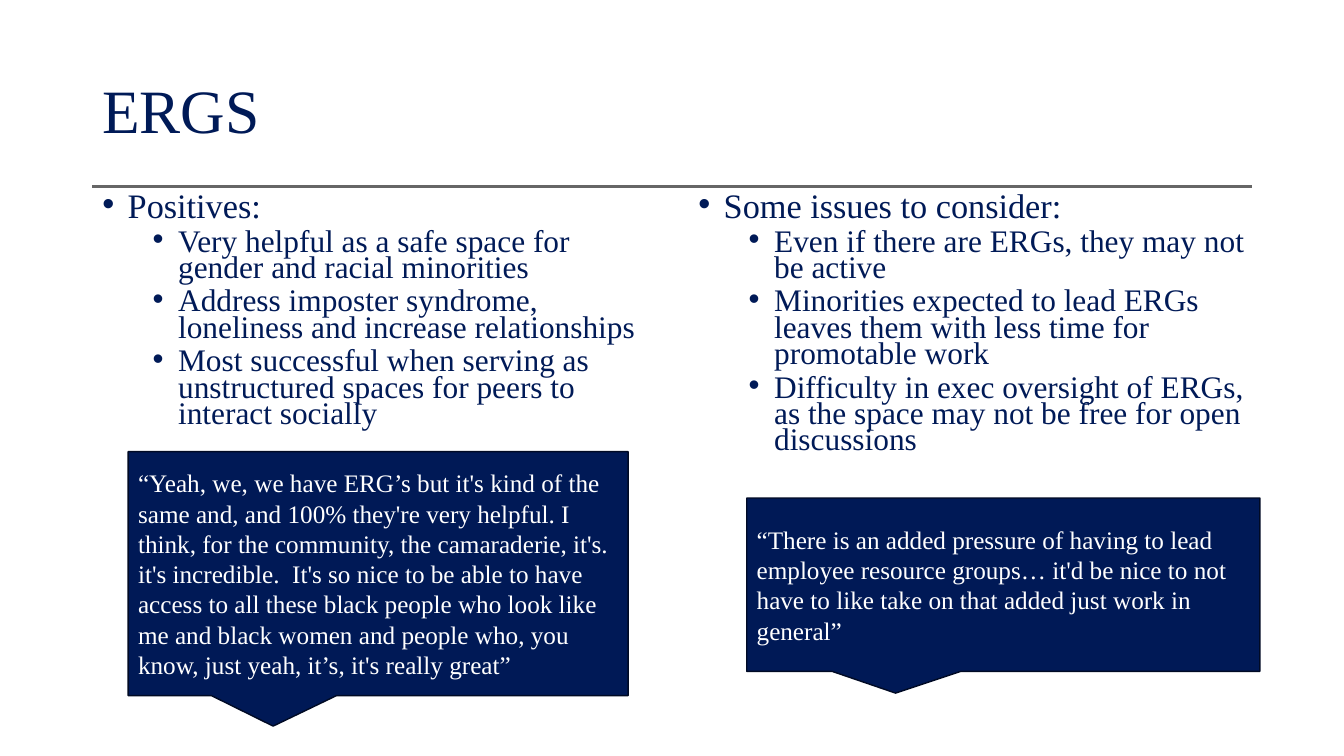
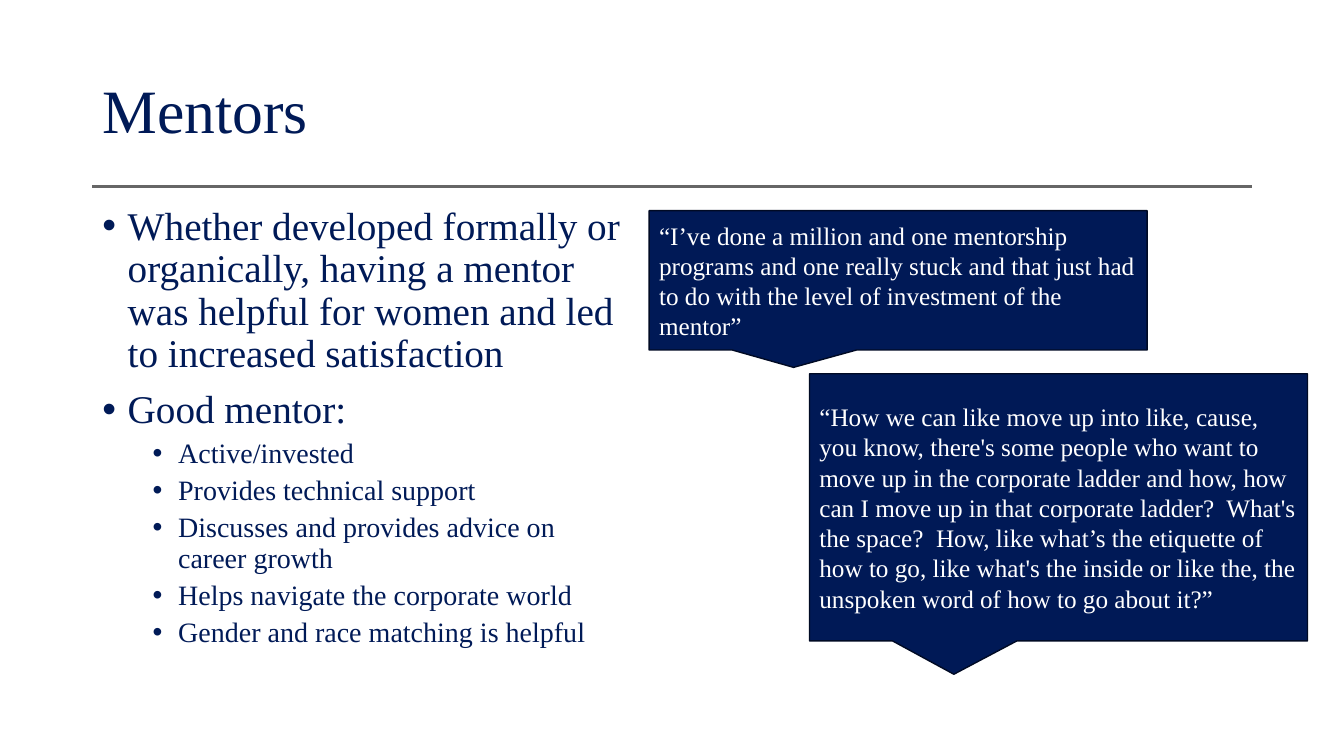
from lxml.etree import SubElement
from pptx import Presentation
from pptx.dml.color import RGBColor
from pptx.enum.shapes import MSO_CONNECTOR as Connector, MSO_SHAPE as Shape
from pptx.enum.text import MSO_ANCHOR as Anchor, PP_ALIGN as Align
from pptx.oxml.ns import qn
from pptx.util import Cm, Pt

FONT = "Times New Roman"
NAVY = "001A57"
CALLOUT_FILL = "001956"
CALLOUT_LINE = "000A24"
GRAY = "666666"
WHITE = "FFFFFF"
LEFT = 2.33
CONTENT_WIDTH = 29.21
RULE_TOP = 4.7
QUOTE_SIZE = 18
SPACE_BEFORE = (10, 5)
INDENTS = (0.64, 1.91)
HANGING = 0.64


def color(value):
    return RGBColor.from_string(value)


def style_font(paragraph, size, text_color):
    for run in paragraph.runs:
        run.font.name = FONT
        run.font.size = Pt(size)
        run.font.color.rgb = color(text_color)


def add_text_box(slide, left, top, width, height):
    shape = slide.shapes.add_textbox(Cm(left), Cm(top), Cm(width), Cm(height))
    shape.text_frame.word_wrap = True
    return shape.text_frame


def add_rule(slide):
    rule = slide.shapes.add_connector(
        Connector.STRAIGHT, Cm(LEFT + CONTENT_WIDTH), Cm(RULE_TOP), Cm(LEFT), Cm(RULE_TOP))
    rule.line.color.rgb = color(GRAY)
    rule.line.width = Pt(1.5)
    SubElement(rule._element.spPr, qn("a:effectLst"))


def add_titled_slide(presentation, title):
    slide = presentation.slides.add_slide(presentation.slide_layouts[6])
    add_rule(slide)
    text_frame = add_text_box(slide, LEFT, 1.02, CONTENT_WIDTH, RULE_TOP - 1.02)
    text_frame.vertical_anchor = Anchor.MIDDLE
    paragraph = text_frame.paragraphs[0]
    paragraph.text = title
    paragraph.line_spacing = 0.9
    style_font(paragraph, 44, NAVY)
    return slide


def add_bullet(paragraph, level):
    properties = paragraph._p.get_or_add_pPr()
    properties.set("marL", str(Cm(INDENTS[level])))
    properties.set("indent", str(-Cm(HANGING)))
    bullet_color = SubElement(properties, qn("a:buClr"))
    SubElement(bullet_color, qn("a:srgbClr"), val=NAVY)
    SubElement(properties, qn("a:buFont"), typeface="Arial")
    SubElement(properties, qn("a:buChar"), char="•")


def add_bullet_list(slide, position, items, sizes, line_spacing):
    text_frame = add_text_box(slide, *position)
    for index, (level, text) in enumerate(items):
        paragraph = text_frame.add_paragraph() if index else text_frame.paragraphs[0]
        paragraph.text = text
        paragraph.level = level
        add_bullet(paragraph, level)
        paragraph.line_spacing = line_spacing
        paragraph.space_before = Pt(SPACE_BEFORE[level] if index else 0)
        style_font(paragraph, sizes[level], NAVY)


def add_quote(slide, left, top, width, height, text):
    shape = slide.shapes.add_shape(
        Shape.ROUNDED_RECTANGULAR_CALLOUT, Cm(left), Cm(top), Cm(width), Cm(height))
    for index, adjustment in enumerate((-0.21, 0.625, 0)):
        shape.adjustments[index] = adjustment
    shape.shadow.inherit = False
    shape.fill.solid()
    shape.fill.fore_color.rgb = color(CALLOUT_FILL)
    shape.line.color.rgb = color(CALLOUT_LINE)
    shape.line.width = Pt(1)
    text_frame = shape.text_frame
    text_frame.word_wrap = True
    text_frame.vertical_anchor = Anchor.MIDDLE
    text_frame.text = text
    paragraph = text_frame.paragraphs[0]
    paragraph.alignment = Align.LEFT
    style_font(paragraph, QUOTE_SIZE, WHITE)


def build_ergs(presentation):
    slide = add_titled_slide(presentation, "ERGS")
    positives = [
        (0, "Positives:"),
        (1, "Very helpful as a safe space for gender and racial minorities"),
        (1, "Address imposter syndrome, loneliness and increase relationships"),
        (1, "Most successful when serving as unstructured spaces for peers to interact socially"),
    ]
    issues = [
        (0, "Some issues to consider:"),
        (1, "Even if there are ERGs, they may not be active"),
        (1, "Minorities expected to lead ERGs leaves them with less time for promotable work"),
        (1, "Difficulty in exec oversight of ERGs, as the space may not be free for open "
            "discussions"),
    ]
    for left, height, items in ((LEFT, 6.3, positives), (17.35, 7.72, issues)):
        add_bullet_list(slide, (left, 4.8, 14.4, height), items, (24.5, 22.4), 0.7)
    add_quote(slide, 3.23, 11.38, 12.6, 6.15,
              "“Yeah, we, we have ERG’s but it's kind of the same and, and 100% they're very "
              "helpful. I think, for the community, the camaraderie, it's. it's incredible.  It's "
              "so nice to be able to have access to all these black people who look like me and "
              "black women and people who, you know, just yeah, it’s, it's really great”")
    add_quote(slide, 18.82, 12.55, 12.93, 4.37,
              "“There is an added pressure of having to lead employee resource groups… it'd be "
              "nice to not have to like take on that added just work in general”")


def build_mentors(presentation):
    slide = add_titled_slide(presentation, "Mentors")
    items = [
        (0, "Whether developed formally or organically, having a mentor was helpful for women "
            "and led to increased satisfaction"),
        (0, "Good mentor:"),
        (1, "Active/invested"),
        (1, "Provides technical support"),
        (1, "Discusses and provides advice on career growth"),
        (1, "Helps navigate the corporate world"),
        (1, "Gender and race matching is helpful"),
    ]
    add_bullet_list(slide, (LEFT, 5.08, 13.74, 12.95), items, (28, 20), 0.9)
    add_quote(slide, 16.36, 5.31, 12.55, 3.51,
              "“I’ve done a million and one mentorship programs and one really stuck and that "
              "just had to do with the level of investment of the mentor”")
    add_quote(slide, 20.4, 9.42, 12.55, 6.73,
              "“How we can like move up into like, cause, you know, there's some people who want "
              "to move up in the corporate ladder and how, how can I move up in that corporate "
              "ladder?  What's the space?  How, like what’s the etiquette of how to go, like "
              "what's the inside or like the, the unspoken word of how to go about it?”")


def main():
    presentation = Presentation()
    presentation.slide_width = Cm(33.87)
    presentation.slide_height = Cm(19.05)
    build_ergs(presentation)
    build_mentors(presentation)
    presentation.save("out.pptx")


if __name__ == "__main__":
    main()
